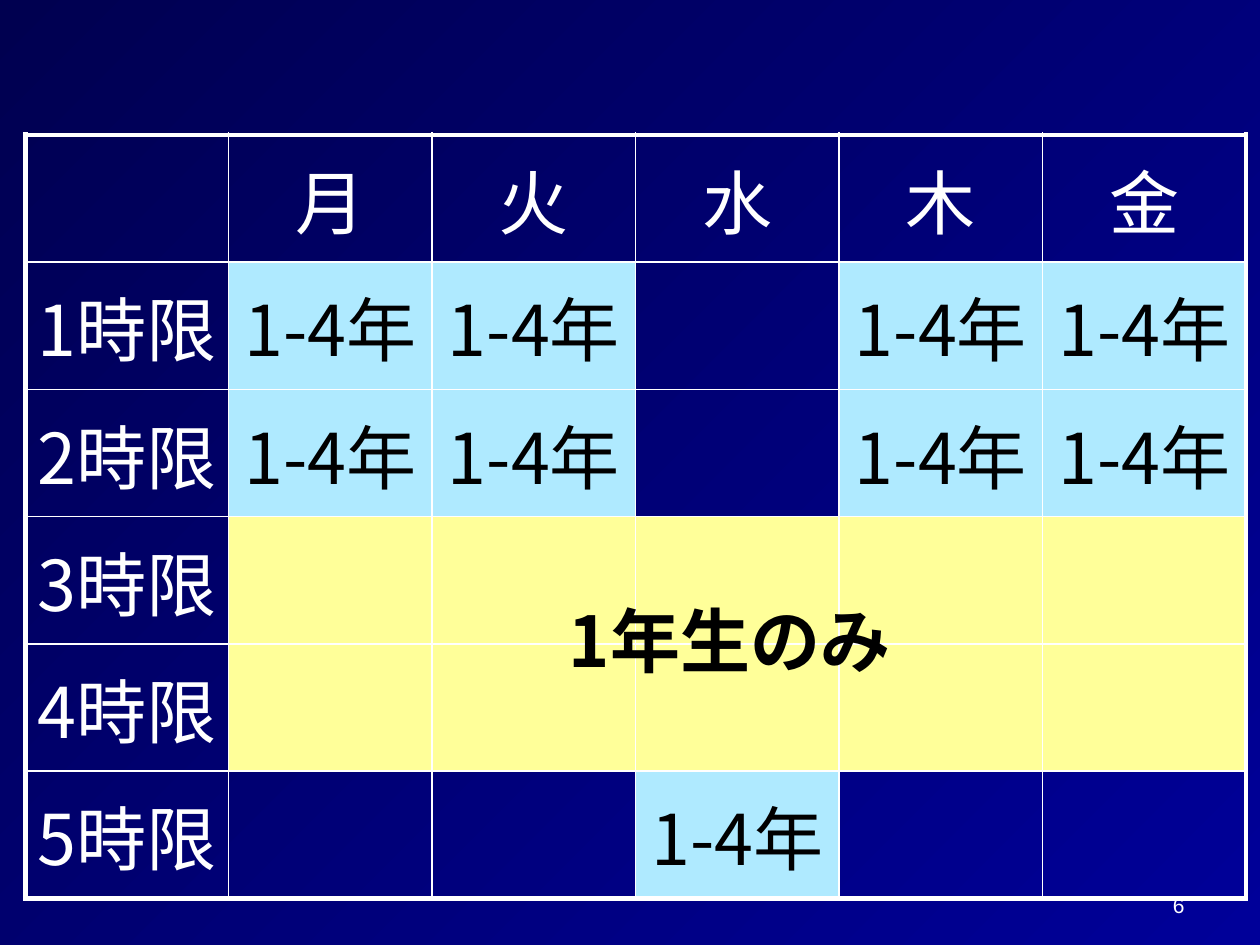
import pptx
import pptx.dml.color
import pptx.enum.text
import pptx.oxml.ns
import pptx.util
from lxml import etree

Inches = pptx.util.Inches
Pt = pptx.util.Pt
RGBColor = pptx.dml.color.RGBColor
ALIGN = pptx.enum.text.PP_ALIGN
ANCHOR = pptx.enum.text.MSO_ANCHOR
qn = pptx.oxml.ns.qn

WHITE = RGBColor(0xFF, 0xFF, 0xFF)
BLACK = RGBColor(0x00, 0x00, 0x00)
NAVY_DARK = RGBColor(0x00, 0x00, 0x50)
NAVY = RGBColor(0x00, 0x00, 0x99)
ALL_YEARS_BLUE = RGBColor(0xAF, 0xEA, 0xFF)
FIRST_YEAR_YELLOW = RGBColor(0xFF, 0xFF, 0x99)

JAPANESE_FONT = "Noto Sans CJK JP"
DAYS = ["月", "火", "水", "木", "金"]
PERIOD_COUNT = 5
ALL_YEARS = "1-4年"
ALL_YEARS_SLOTS = {(period, day) for period in (1, 2) for day in "月火木金"} | {(5, "水")}
FIRST_YEAR_PERIODS = (3, 4)


def add_text(paragraph, text, size, font, color, align, bold=False):
    paragraph.alignment = align
    run = paragraph.add_run()
    run.text = text
    run.font.size = Pt(size)
    run.font.name = font
    run.font.bold = bold
    run.font.color.rgb = color
    east_asian = etree.SubElement(run._r.get_or_add_rPr(), qn("a:ea"))
    east_asian.set("typeface", font)


def set_borders(cell, widths):
    properties = cell._tc.get_or_add_tcPr()
    for side, width in widths.items():
        line = etree.SubElement(properties, qn("a:ln" + side), w=str(Pt(width)))
        fill = etree.SubElement(line, qn("a:solidFill"))
        etree.SubElement(fill, qn("a:srgbClr"), val=str(WHITE))


def cell_content(row, column):
    """Return the text, text colour and fill of one timetable cell."""
    if row == 0:
        return (DAYS[column - 1] if column else ""), WHITE, None
    if column == 0:
        return f"{row}時限", WHITE, None
    if row in FIRST_YEAR_PERIODS:
        return "", BLACK, FIRST_YEAR_YELLOW
    if (row, DAYS[column - 1]) in ALL_YEARS_SLOTS:
        return ALL_YEARS, BLACK, ALL_YEARS_BLUE
    return "", WHITE, None


def add_background(slide):
    fill = slide.background.fill
    fill.gradient()
    fill.gradient_angle = 315
    for stop, color in zip(fill.gradient_stops, (NAVY_DARK, NAVY)):
        stop.color.rgb = color


def add_timetable(slide, left, top, width, height):
    row_count, column_count = PERIOD_COUNT + 1, len(DAYS) + 1
    table = slide.shapes.add_table(row_count, column_count, left, top, width, height).table
    table.first_row = False
    table.horz_banding = False
    for row in range(row_count):
        for column in range(column_count):
            cell = table.cell(row, column)
            text, color, fill = cell_content(row, column)
            # Thick frame outside, thin grid inside
            set_borders(cell, {
                "L": 3 if column == 0 else 1,
                "R": 3 if column == column_count - 1 else 1,
                "T": 3 if row == 0 else 1,
                "B": 3 if row == row_count - 1 else 1,
            })
            if fill is None:
                cell.fill.background()
            else:
                cell.fill.solid()
                cell.fill.fore_color.rgb = fill
            cell.vertical_anchor = ANCHOR.MIDDLE
            cell.margin_left = cell.margin_right = cell.margin_top = Inches(0.01)
            cell.margin_bottom = 0
            if text:
                add_text(cell.text_frame.paragraphs[0], text, 40, JAPANESE_FONT,
                         color, ALIGN.CENTER)


def add_first_year_label(slide, left, top, width, height):
    frame = slide.shapes.add_textbox(left, top, width, height).text_frame
    frame.word_wrap = True
    frame.auto_size = pptx.enum.text.MSO_AUTO_SIZE.SHAPE_TO_FIT_TEXT
    add_text(frame.paragraphs[0], "1年生のみ", 40, JAPANESE_FONT, BLACK,
             ALIGN.CENTER, bold=True)


def add_page_number(slide, left, top, width, height):
    frame = slide.shapes.add_textbox(left, top, width, height).text_frame
    frame.word_wrap = True
    frame.vertical_anchor = ANCHOR.BOTTOM
    add_text(frame.paragraphs[0], "6", 12, "Arial", WHITE, ALIGN.RIGHT)


def main():
    presentation = pptx.Presentation()
    presentation.slide_width = Inches(10)
    presentation.slide_height = Inches(7.5)
    slide = presentation.slides.add_slide(presentation.slide_layouts[6])

    add_background(slide)
    add_page_number(slide, Inches(7.17), Inches(6.83), Inches(2.33), Inches(0.5))
    add_timetable(slide, Inches(0.2), Inches(1.07), Inches(9.69), Inches(6.06))
    add_first_year_label(slide, Inches(4.41), Inches(4.69), Inches(2.76), Inches(0.77))

    presentation.save("out.pptx")


if __name__ == "__main__":
    main()
